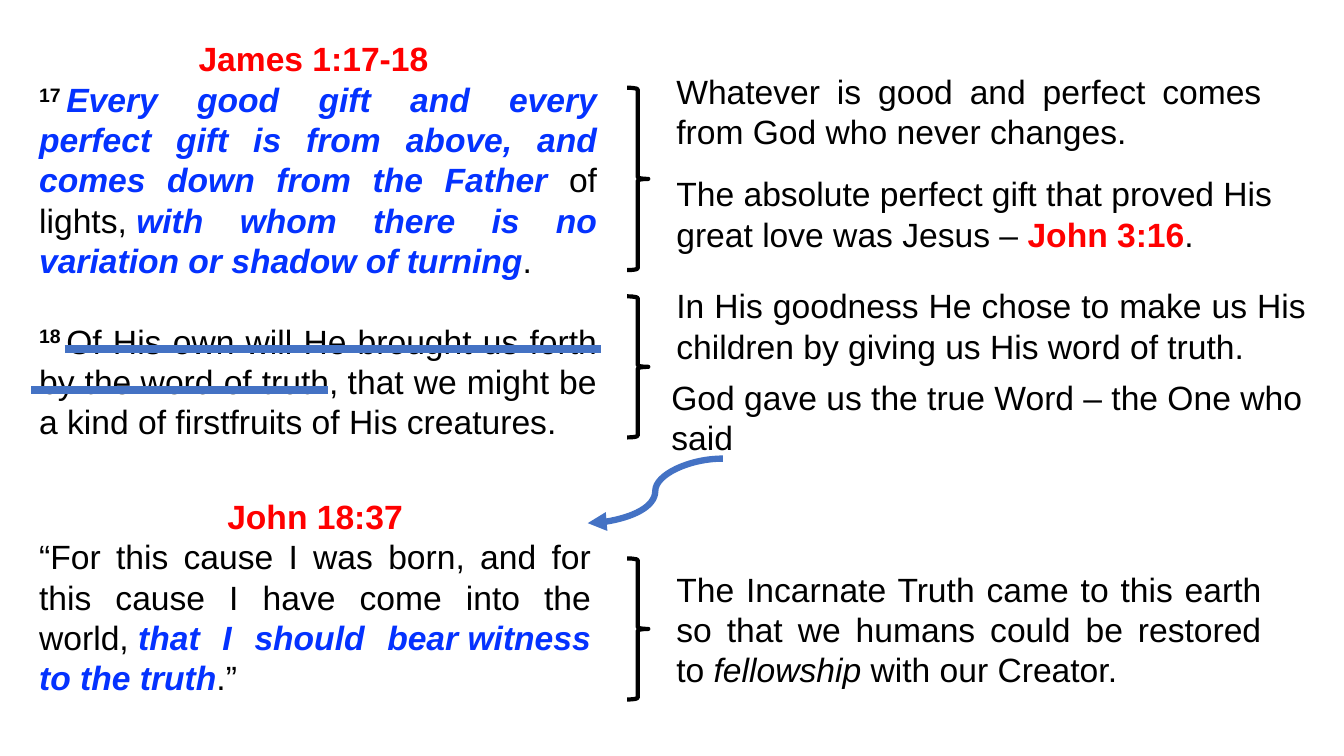
from lxml import etree
from pptx import Presentation
from pptx.dml.color import RGBColor
from pptx.enum.shapes import MSO_CONNECTOR, MSO_SHAPE
from pptx.enum.text import MSO_AUTO_SIZE, PP_ALIGN
from pptx.oxml.ns import qn
from pptx.util import Inches, Pt

BLACK = RGBColor(0x00, 0x00, 0x00)
RED = RGBColor(0xFF, 0x00, 0x00)
BLUE = RGBColor(0x04, 0x32, 0xFF)
STROKE = RGBColor(0x44, 0x72, 0xC4)

# Run styles: colour, bold, italic, raised
PLAIN = (BLACK, False, False, False)
REFERENCE = (RED, True, False, False)
EMPHASIS = (BLUE, True, True, False)
ITALIC = (BLACK, False, True, False)
VERSE = (BLACK, True, False, True)

BRACE_LEFT, BRACE_WIDTH = 6.22, 0.21
NOTE_LEFT = 6.61


def add_text(shapes, left, top, width, height, paragraphs):
    """Add a text box; each paragraph is (alignment, space before, runs)."""
    box = shapes.add_textbox(Inches(left), Inches(top), Inches(width), Inches(height))
    frame = box.text_frame
    frame.word_wrap = True
    frame.auto_size = MSO_AUTO_SIZE.SHAPE_TO_FIT_TEXT
    for index, (alignment, space, runs) in enumerate(paragraphs):
        para = frame.paragraphs[0] if index == 0 else frame.add_paragraph()
        para.alignment = alignment
        if space:
            para.space_before = Pt(space)
        para.font.name = "Arial"
        para.font.size = Pt(24)
        for text, (color, bold, italic, raised) in runs:
            span = para.add_run()
            span.text = text
            span.font.color.rgb = color
            span.font.bold = bold
            span.font.italic = italic
            if raised:
                span.font._element.set("baseline", "30000")


def add_note(shapes, top, width, height, runs, alignment=PP_ALIGN.JUSTIFY, left=NOTE_LEFT):
    add_text(shapes, left, top, width, height, [(alignment, 0, runs)])


def add_brace(shapes, top, height):
    brace = shapes.add_shape(MSO_SHAPE.RIGHT_BRACE, Inches(BRACE_LEFT), Inches(top),
                             Inches(BRACE_WIDTH), Inches(height))
    brace.shadow.inherit = False
    brace.fill.background()
    brace.line.color.rgb = BLACK
    brace.line.width = Pt(3)


def add_stroke(shapes, kind, start, end, width):
    stroke = shapes.add_connector(kind, *map(Inches, start + end))
    stroke.line.color.rgb = STROKE
    stroke.line.width = Pt(width)
    etree.SubElement(stroke._element.spPr, qn("a:effectLst"))
    return stroke


def add_arrow(shapes, start, end):
    arrow = add_stroke(shapes, MSO_CONNECTOR.CURVE, start, end, 4.5)
    etree.SubElement(arrow.line._get_or_add_ln(), qn("a:tailEnd"), type="triangle")


def add_underline(shapes, left, right, y):
    add_stroke(shapes, MSO_CONNECTOR.STRAIGHT, (left, y), (right, y), 6)


def add_braced_note(page, brace_top, brace_height, top, width, height, runs):
    group = page.shapes.add_group_shape()
    add_brace(group.shapes, brace_top, brace_height)
    add_note(group.shapes, top, width, height, runs)


def main():
    deck = Presentation()
    deck.slide_width, deck.slide_height = Inches(13.33), Inches(7.5)
    page = deck.slides.add_slide(deck.slide_layouts[6])

    add_text(page.shapes, 0.29, 0.33, 5.73, 4.01, [
        (PP_ALIGN.CENTER, 0, [("James 1:17-18\u00a0", REFERENCE)]),
        (PP_ALIGN.JUSTIFY, 0, [
            ("17\u00a0", VERSE),
            ("Every good gift and every perfect gift is from above, "
             "and comes down from the Father ", EMPHASIS),
            ("of lights,\u00a0", PLAIN),
            ("with whom there is no variation or shadow of turning", EMPHASIS),
            (".\u00a0", PLAIN)]),
        (PP_ALIGN.JUSTIFY, 28.8, [
            ("18\u00a0", VERSE),
            ("Of His own will He brought us forth by the\u00a0word of truth,\u00a0"
             "that we might be a kind of firstfruits of His creatures.", PLAIN)]),
    ])
    add_braced_note(page, 0.87, 1.81, 0.65, 6, 0.91, [
        ("Whatever is good and perfect comes from God who never changes.", PLAIN)])
    add_note(page.shapes, 3.69, 6.55, 0.91, [
        ("God gave us the true Word – the One who said", PLAIN)], PP_ALIGN.LEFT, 6.56)
    add_braced_note(page, 2.94, 1.4, 2.78, 6.44, 0.91, [
        ("In His goodness He chose to make us His children "
         "by giving us His word of truth.", PLAIN)])
    add_underline(page.shapes, 0.64, 5.96, 3.46)
    add_note(page.shapes, 1.67, 6.22, 0.91, [
        ("The absolute perfect gift that proved His great love was Jesus – ", PLAIN),
        ("John 3:16", REFERENCE), (".", PLAIN)], PP_ALIGN.LEFT)
    add_underline(page.shapes, 0.31, 3.25, 3.87)

    john = page.shapes.add_group_shape()
    add_text(john.shapes, 0.29, 4.87, 5.67, 2.12, [
        (PP_ALIGN.CENTER, 0, [("John 18:37", REFERENCE)]),
        (PP_ALIGN.JUSTIFY, 0, [
            ("“For this cause I was born, and for this cause "
             "I have come into the world,\u00a0", PLAIN),
            ("that I should bear\u00a0witness to the truth", EMPHASIS),
            (".”", PLAIN)]),
    ])
    add_arrow(john.shapes, (7.17, 4.55), (5.83, 5.19))
    add_braced_note(page, 5.54, 1.4, 5.59, 6, 1.31, [
        ("The Incarnate Truth came to this earth so that we humans "
         "could be restored to ", PLAIN),
        ("fellowship", ITALIC), (" with our Creator.", PLAIN)])

    deck.save("out.pptx")


if __name__ == "__main__":
    main()
